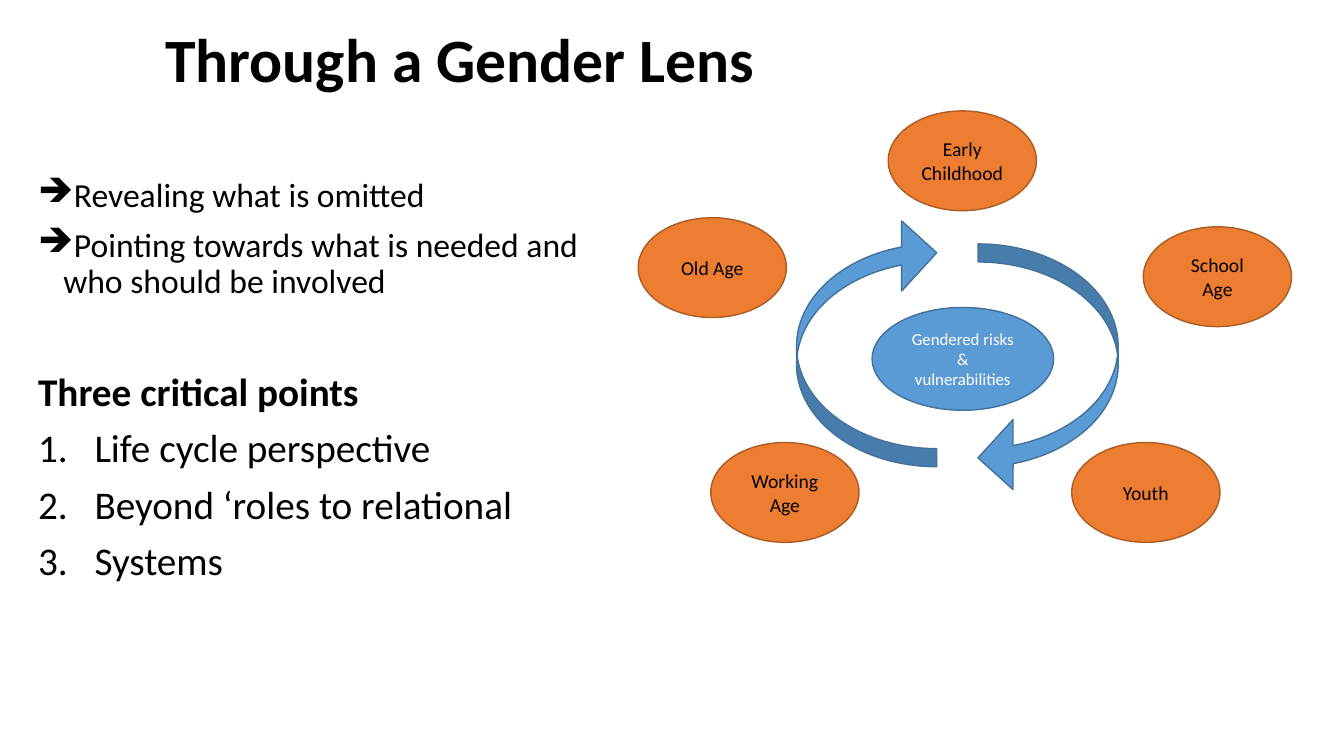
from dataclasses import dataclass
from typing import Optional

from lxml import etree
from pptx import Presentation
from pptx import util as u
from pptx.dml.color import RGBColor
from pptx.enum import shapes, text
from pptx.oxml import ns

BLACK = RGBColor(0x00, 0x00, 0x00)
WHITE = RGBColor(0xFF, 0xFF, 0xFF)
ORANGE = RGBColor(0xED, 0x7D, 0x31)
DARK_ORANGE = RGBColor(0xAC, 0x5B, 0x23)
BLUE = RGBColor(0x5B, 0x9B, 0xD5)
DARK_BLUE = RGBColor(0x42, 0x71, 0x9B)

ARROW_BULLET = ("a:buChar", {"char": "➔"})
NUMBER_BULLET = ("a:buAutoNum", {"type": "arabicPeriod"})


@dataclass
class Line:
    wording: str
    size: float
    bold: bool = False
    space_before: float = 0
    indent: float = 0
    bullet: Optional[tuple] = None


@dataclass
class Oval:
    wording: str
    left: float
    top: float
    width: float = 1.47
    height: float = 0.99
    size: float = 14
    fill: RGBColor = ORANGE
    outline: RGBColor = DARK_ORANGE
    color: RGBColor = BLACK


@dataclass
class CycleArrow:
    left: float
    top: float
    rotation: float


TITLE = [Line("Through a Gender Lens", 44, bold=True)]

BODY = [
    Line("Revealing what is omitted", 24, indent=0.25, bullet=ARROW_BULLET),
    Line("Pointing towards what is needed and who should be involved", 24,
         space_before=10, indent=0.25, bullet=ARROW_BULLET),
    Line("Three critical points", 28, bold=True, space_before=51),
] + [
    Line(point, 28, space_before=10, indent=0.56, bullet=NUMBER_BULLET)
    for point in ("Life cycle perspective", "Beyond ‘roles to relational", "Systems")
]

LIFE_STAGES = [
    Oval("Early Childhood", 8.81, 1.1),
    Oval("School Age", 11.34, 2.25),
    Oval("Youth", 10.63, 4.39),
    Oval("Working Age", 7.05, 4.39),
    Oval("Old Age", 6.33, 2.16),
]
CYCLE_ARROWS = [CycleArrow(9.7, 2.42, 0), CycleArrow(7.9, 2.16, 180)]
CENTRE = Oval("Gendered risks & vulnerabilities", 8.65, 3.05, 1.8, 1.02, 12,
              BLUE, DARK_BLUE, WHITE)


def apply_format(target, values: dict) -> None:
    for name, value in values.items():
        setattr(target, name, value)


def add_run(paragraph, wording: str, size: float, color: RGBColor, bold: bool = False) -> None:
    run = paragraph.add_run()
    run.text = wording
    apply_format(run.font, {"name": "Calibri", "size": u.Pt(size), "bold": bold})
    run.font.color.rgb = color


def add_text(slide, box: tuple, lines: list[Line], anchor) -> None:
    frame = slide.shapes.add_textbox(*map(u.Inches, box)).text_frame
    apply_format(frame, {"word_wrap": True, "vertical_anchor": anchor})
    for index, line in enumerate(lines):
        paragraph = frame.add_paragraph() if index else frame.paragraphs[0]
        apply_format(paragraph, {"line_spacing": 0.9, "space_before": u.Pt(line.space_before)})
        add_run(paragraph, line.wording, line.size, BLACK, line.bold)
        if line.bullet:
            tag, attributes = line.bullet
            properties = paragraph._p.get_or_add_pPr()
            properties.set("marL", str(u.Inches(line.indent)))
            properties.set("indent", str(-u.Inches(line.indent)))
            etree.SubElement(properties, ns.qn(tag), attributes)


def add_figure(slide, kind, box: tuple, fill: RGBColor, outline: RGBColor):
    shape = slide.shapes.add_shape(kind, *map(u.Inches, box))
    shape.shadow.inherit = False
    shape.fill.solid()
    shape.fill.fore_color.rgb = fill
    shape.line.color.rgb = outline
    shape.line.width = u.Pt(1)
    return shape


def add_oval(slide, oval: Oval) -> None:
    box = (oval.left, oval.top, oval.width, oval.height)
    shape = add_figure(slide, shapes.MSO_SHAPE.OVAL, box, oval.fill, oval.outline)
    frame = shape.text_frame
    apply_format(frame, {"word_wrap": True, "vertical_anchor": text.MSO_ANCHOR.MIDDLE})
    paragraph = frame.paragraphs[0]
    paragraph.alignment = text.PP_ALIGN.CENTER
    add_run(paragraph, oval.wording, oval.size, oval.color)


def add_cycle_arrow(slide, arrow: CycleArrow) -> None:
    shape = add_figure(slide, shapes.MSO_SHAPE.CURVED_LEFT_ARROW,
                       (arrow.left, arrow.top, 1.39, 2.47), BLUE, DARK_BLUE)
    shape.rotation = arrow.rotation
    for index, value in enumerate((0.129, 0.5, 0.25)):
        shape.adjustments[index] = value


def main() -> None:
    presentation = Presentation()
    apply_format(presentation, {"slide_width": u.Inches(13.33), "slide_height": u.Inches(7.5)})
    slide = presentation.slides.add_slide(presentation.slide_layouts[6])

    # Title and body text
    add_text(slide, (1.54, -0.1, 9.9, 1.45), TITLE, text.MSO_ANCHOR.MIDDLE)
    add_text(slide, (0.28, 1.72, 5.67, 4.78), BODY, text.MSO_ANCHOR.TOP)

    # Life cycle diagram
    for stage in LIFE_STAGES:
        add_oval(slide, stage)
    for arrow in CYCLE_ARROWS:
        add_cycle_arrow(slide, arrow)
    add_oval(slide, CENTRE)

    presentation.save("out.pptx")


if __name__ == "__main__":
    main()
